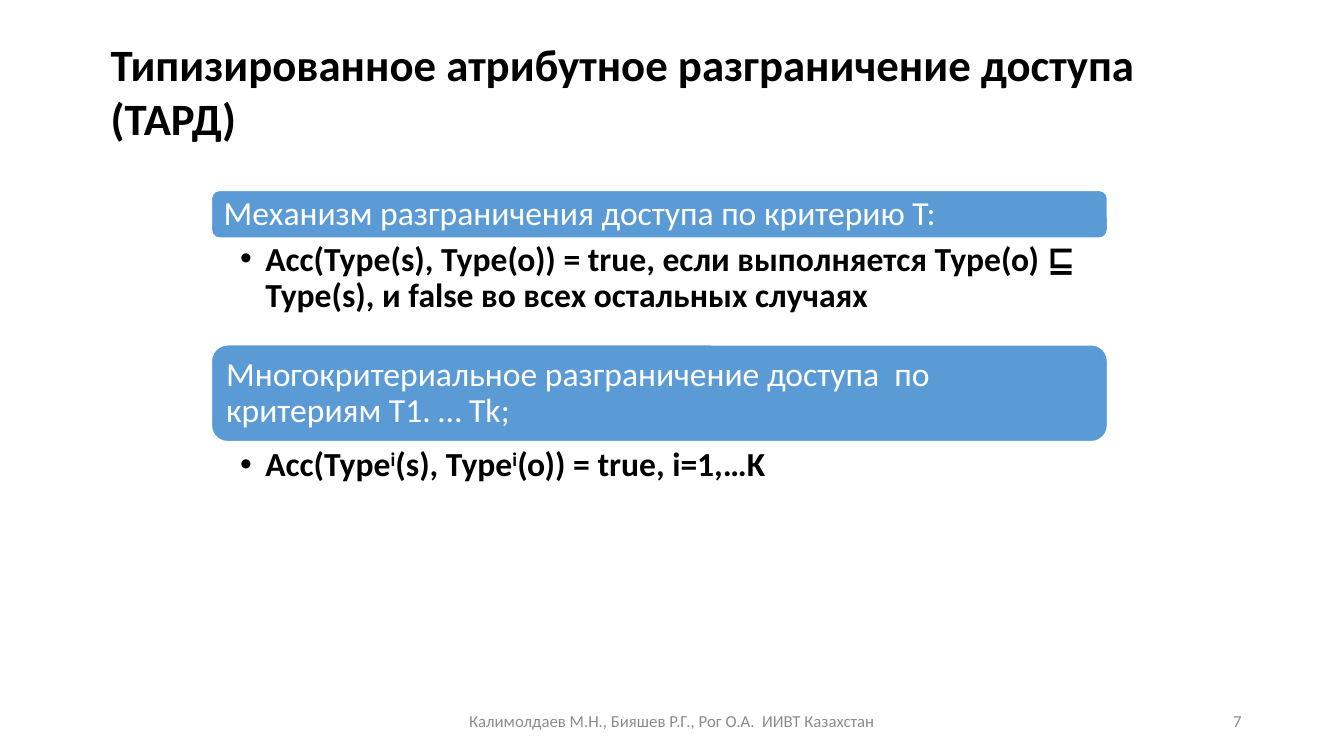
import dataclasses
import typing

import lxml.etree
import pptx
import pptx.dml.color
import pptx.enum.shapes
import pptx.enum.text
import pptx.oxml.ns
import pptx.util

Cm = pptx.util.Cm
Align = pptx.enum.text.PP_ALIGN
Anchor = pptx.enum.text.MSO_ANCHOR


def color(value: str) -> pptx.dml.color.RGBColor:
    return pptx.dml.color.RGBColor.from_string(value)


@dataclasses.dataclass(frozen=True)
class Theme:
    font: str = "Calibri"
    ink: str = "000000"
    paper: str = "FFFFFF"
    accent: str = "5B9BD5"
    muted: str = "8C8C8C"
    title_size: int = 32
    body_size: int = 24
    footer_size: int = 12


class Area(typing.NamedTuple):
    left: float
    top: float
    width: float
    height: float


class Insets(typing.NamedTuple):
    left: float = 0.25
    top: float = 0.13
    right: float = 0.25
    bottom: float = 0.13


@dataclasses.dataclass(frozen=True)
class Section:
    heading: str
    heading_top: float
    heading_height: float
    rule: str
    rule_top: float
    rule_height: float


@dataclasses.dataclass(frozen=True)
class FooterItem:
    text: str
    area: Area
    align: Align


THEME = Theme()
SECTION_LEFT = 5.33
SECTION_WIDTH = 22.58
HEADING_INSETS = Insets(0.25, 0.25, 0.25, 0.25)
RULE_INSETS = Insets(0.72, 0.08, 0.48, 0.08)
BULLET_INDENT = 0.635
TITLE = "Типизированное атрибутное разграничение доступа (ТАРД)"
TITLE_AREA = Area(2.54, 0.79, 28.8, 1.63)
SECTIONS = (
    Section("Механизм разграничения доступа по критерию T:", 4.8, 1.2,
            "Acc(Type(s), Type(o)) = true, если выполняется Type(o) ⊑ Type(s), "
            "и false во всех остальных случаях", 6.02, 2.95),
    Section("Многокритериальное разграничение доступа  по критериям Т1. … Tk;",
            8.69, 2.44, "Acc(Type^i^(s), Type^i^(o)) = true, i=1,…K", 11.2, 0.71),
)
FOOTER = (
    FooterItem("Калимолдаев М.Н., Бияшев Р.Г., Рог О.А.  ИИВТ Казахстан",
               Area(11.22, 17.65, 11.43, 1.02), Align.CENTER),
    FooterItem("7", Area(23.92, 17.65, 7.62, 1.02), Align.RIGHT),
)


def write_text(box, text: str, *, size: int, ink: str, bold: bool = False,
               align: Align = Align.LEFT, anchor: Anchor = Anchor.TOP,
               spacing: float = 1.0, insets: Insets = Insets()):
    frame = box.text_frame
    frame.word_wrap = True
    frame.auto_size = pptx.enum.text.MSO_AUTO_SIZE.NONE
    frame.vertical_anchor = anchor
    frame.margin_left, frame.margin_top, frame.margin_right, frame.margin_bottom = map(Cm, insets)
    para = frame.paragraphs[0]
    para.alignment = align
    para.line_spacing = spacing
    para.space_before = pptx.util.Pt(0)
    for index, piece in enumerate(text.split("^")):
        span = para.add_run()
        span.text = piece
        span.font.name = THEME.font
        span.font.size = pptx.util.Pt(size)
        span.font.bold = bold
        span.font.color.rgb = color(ink)
        if index % 2:
            span.font._element.set("baseline", "30000")
    return para


def place(box, area: Area) -> None:
    box.left, box.top, box.width, box.height = map(Cm, area)


def add_bullet(para) -> None:
    properties = para._p.get_or_add_pPr()
    properties.set("marL", str(Cm(BULLET_INDENT)))
    properties.set("indent", str(-Cm(BULLET_INDENT)))
    bullet = lxml.etree.SubElement(properties, pptx.oxml.ns.qn("a:buChar"))
    bullet.set("char", "•")


def draw_section(page, section: Section, body) -> None:
    area = Area(SECTION_LEFT, section.heading_top, SECTION_WIDTH, section.heading_height)
    heading = page.shapes.add_shape(
        pptx.enum.shapes.MSO_SHAPE.ROUNDED_RECTANGLE, *map(Cm, area))
    heading.shadow.inherit = False
    heading.fill.solid()
    heading.fill.fore_color.rgb = color(THEME.accent)
    heading.line.color.rgb = color(THEME.paper)
    heading.line.width = pptx.util.Pt(1)
    write_text(heading, section.heading, size=THEME.body_size, ink=THEME.paper,
               anchor=Anchor.MIDDLE, spacing=0.9, insets=HEADING_INSETS)
    place(body, Area(SECTION_LEFT, section.rule_top, SECTION_WIDTH, section.rule_height))
    add_bullet(write_text(body, section.rule, size=THEME.body_size, ink=THEME.ink,
                          bold=True, spacing=0.9, insets=RULE_INSETS))


def draw_footer_item(page, item: FooterItem) -> None:
    box = page.shapes.add_textbox(*map(Cm, item.area))
    write_text(box, item.text, size=THEME.footer_size, ink=THEME.muted,
               align=item.align, anchor=Anchor.MIDDLE)


def main() -> None:
    deck = pptx.Presentation()
    deck.slide_width, deck.slide_height = Cm(33.87), Cm(19.05)
    two_lists = deck.slide_layouts[3]
    page = deck.slides.add_slide(two_lists)
    title, *bodies = page.placeholders
    place(title, TITLE_AREA)
    write_text(title, TITLE, size=THEME.title_size, ink=THEME.ink, bold=True)
    for section, body in zip(SECTIONS, bodies):
        draw_section(page, section, body)
    for item in FOOTER:
        draw_footer_item(page, item)
    deck.save("out.pptx")


if __name__ == "__main__":
    main()
